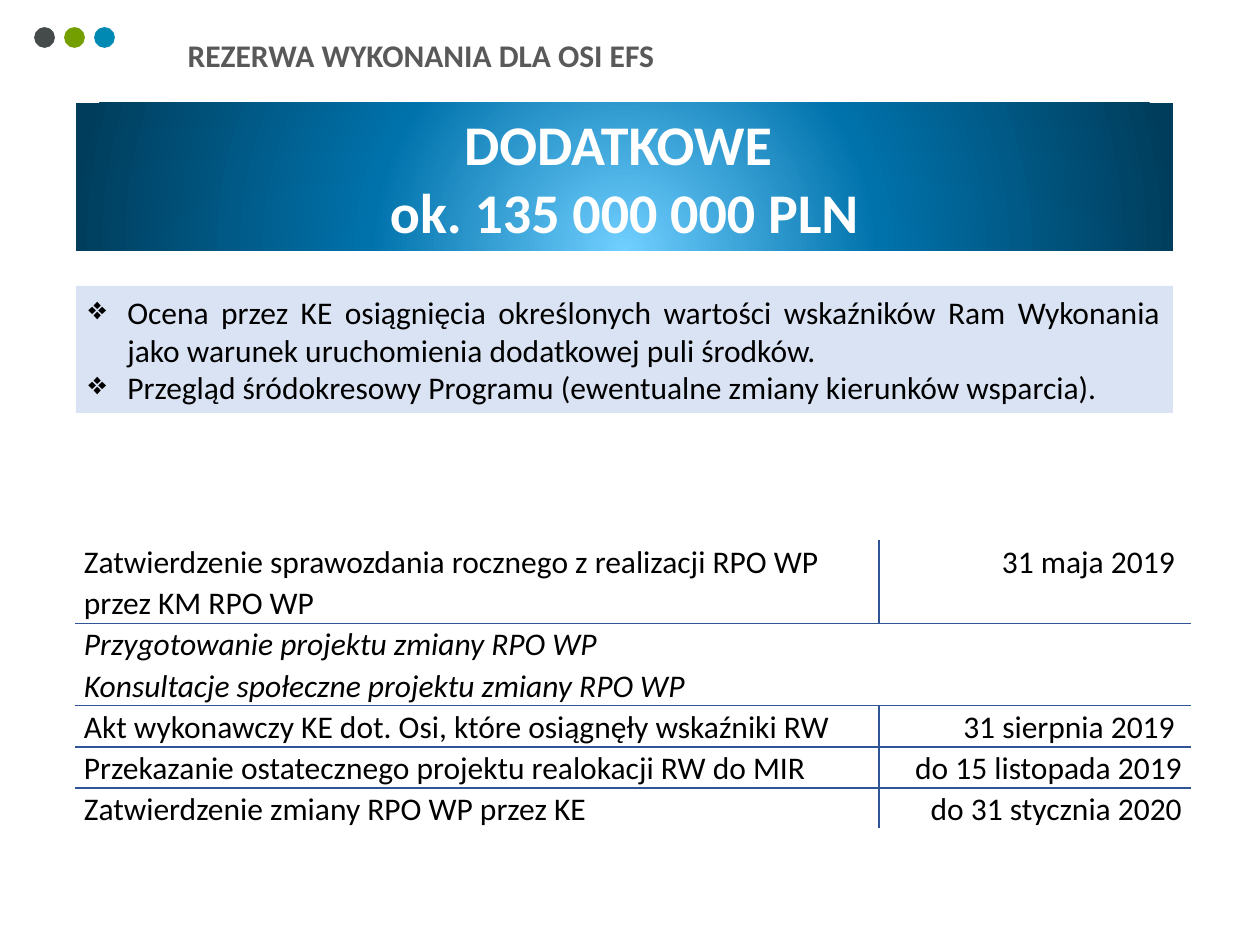
from lxml import etree
from pptx import Presentation
from pptx.dml.color import RGBColor
from pptx.enum.shapes import MSO_SHAPE
from pptx.enum.text import MSO_ANCHOR, MSO_AUTO_SIZE, PP_ALIGN
from pptx.oxml.ns import qn
from pptx.util import Emu, Pt

LEFT, CENTER, RIGHT, JUSTIFY = PP_ALIGN.LEFT, PP_ALIGN.CENTER, PP_ALIGN.RIGHT, PP_ALIGN.JUSTIFY
TOP, MIDDLE = MSO_ANCHOR.TOP, MSO_ANCHOR.MIDDLE
RECTANGLE, OVAL = MSO_SHAPE.RECTANGLE, MSO_SHAPE.OVAL
NO_AUTOFIT = MSO_AUTO_SIZE.NONE

# Content
TITLE = "REZERWA WYKONANIA DLA OSI EFS"
BANNER = ["DODATKOWE ", "ok. 135 000 000 PLN"]
CONDITIONS = [
    "Ocena przez KE osiągnięcia określonych wartości wskaźników Ram Wykonania "
    "jako warunek uruchomienia dodatkowej puli środków.",
    "Przegląd śródokresowy Programu (ewentualne zmiany kierunków wsparcia).",
]
# Stage, date (None: the stage spans both columns), row height
SCHEDULE = [
    ("Zatwierdzenie sprawozdania rocznego z realizacji RPO WP przez KM RPO WP",
     "31 maja 2019 ", 81),
    ("Przygotowanie projektu zmiany RPO WP\nKonsultacje społeczne projektu zmiany RPO WP\u00a0",
     None, 81),
    ("Akt wykonawczy KE dot. Osi, które osiągnęły wskaźniki RW", "31 sierpnia 2019 ", 40),
    ("Przekazanie ostatecznego projektu realokacji RW do MIR", "do 15 listopada 2019", 41),
    ("Zatwierdzenie zmiany RPO WP przez KE", "do 31 stycznia 2020", 40),
]
COLUMNS = [803, 311]

COLORS = {"title": "595959", "white": "FFFFFF", "text": "000000",
          "panel": "DAE3F3", "rule": "2F5597"}
DOTS = ["454B4B", "73A000", "0089B3"]
BANNER_STOPS = [(0, "70CFFF"), (46, "0072AB"), (100, "003D5C")]
FONT = "Calibri"
MARGIN, BAND_WIDTH = 76, 1097


def px(value):
    return Emu(round(value * 914400 / 126))


def rgb(color):
    return RGBColor.from_string(color)


def add_child(parent, tag, **attributes):
    child = etree.SubElement(parent, qn(tag))
    for name, value in attributes.items():
        child.set(name, str(value))
    return child


def write(frame, text, size, color, align, bold=False, italic=False, bullet=None):
    frame.text = text
    frame.word_wrap = True
    for paragraph in frame.paragraphs:
        paragraph.alignment = align
        if bullet:
            properties = paragraph._p.get_or_add_pPr()
            properties.set("marL", str(px(39)))
            properties.set("indent", str(px(-39)))
            add_child(properties, "a:buChar", char=bullet)
        for span in paragraph.runs:
            font = span.font
            font.name, font.size = FONT, Pt(size)
            font.bold, font.italic = bold, italic
            font.color.rgb = rgb(color)


def add_block(page, kind, left, top, width, height, color):
    block = page.shapes.add_shape(kind, px(left), px(top), px(width), px(height))
    block.shadow.inherit = False
    block.fill.solid()
    block.fill.fore_color.rgb = rgb(color)
    block.line.fill.background()
    block.text_frame.vertical_anchor = MIDDLE
    return block


def set_radial_fill(shape, stops):
    shape.fill.gradient()
    gradient = shape._element.spPr.find(qn("a:gradFill"))
    for child in list(gradient):
        gradient.remove(child)
    stop_list = add_child(gradient, "a:gsLst")
    for position, color in stops:
        stop = add_child(stop_list, "a:gs", pos=position * 1000)
        add_child(stop, "a:srgbClr", val=color)
    circle = add_child(gradient, "a:path", path="circle")
    add_child(circle, "a:fillToRect", l=50000, t=130000, r=50000, b=-30000)


def set_borders(cell, inner_sides):
    properties = cell._tc.get_or_add_tcPr()
    for side in "LRTB":
        line = add_child(properties, "a:ln" + side, w=Pt(1))
        fill = add_child(line, "a:solidFill")
        add_child(fill, "a:srgbClr", val=COLORS["rule" if side in inner_sides else "white"])


def add_schedule(page):
    heights = [height for _, _, height in SCHEDULE]
    table = page.shapes.add_table(len(SCHEDULE), len(COLUMNS), px(MARGIN), px(541),
                                  px(sum(COLUMNS)), px(sum(heights))).table
    table.first_row = table.horz_banding = False
    for column, width in zip(table.columns, COLUMNS):
        column.width = px(width)
    for index, (stage, date, height) in enumerate(SCHEDULE):
        table.rows[index].height = px(height)
        spanning = date is None
        if spanning:
            table.cell(index, 0).merge(table.cell(index, 1))
        # Rules run only between cells; the outer edges are white
        inner = ("T" if index else "") + ("B" if index < len(SCHEDULE) - 1 else "")
        sides = [inner + ("" if spanning else side) for side in "RL"]
        for position, (text, align) in enumerate([(stage, LEFT), (date, RIGHT)]):
            cell = table.cell(index, position)
            set_borders(cell, sides[position])
            cell.fill.background()
            cell.margin_left = cell.margin_right = px(8)
            cell.margin_top = cell.margin_bottom = 0
            if text:
                write(cell.text_frame, text, 18, COLORS["text"], align, italic=spanning)
                for paragraph in cell.text_frame.paragraphs:
                    paragraph.line_spacing = 1.07


def main():
    deck = Presentation()
    deck.slide_width, deck.slide_height = px(1260), px(945)
    page = deck.slides.add_slide(deck.slide_layouts[5])

    # Title
    title = page.shapes.title
    title.left, title.top, title.width, title.height = px(175), px(30), px(520), px(50)
    write(title.text_frame, TITLE, 18, COLORS["title"], LEFT, bold=True)
    title.text_frame.auto_size = NO_AUTOFIT
    title.text_frame.vertical_anchor = TOP

    # Corner dots
    for index, color in enumerate(DOTS):
        dot = add_block(page, OVAL, 35 + 30 * index, 28, 19, 19, color)
        dot.line.color.rgb = rgb(color)
        dot.line.width = Pt(1)

    # Amount banner
    banner = add_block(page, RECTANGLE, MARGIN, 103, BAND_WIDTH, 148, COLORS["panel"])
    set_radial_fill(banner, BANNER_STOPS)
    write(banner.text_frame, "\n".join(BANNER), 32, COLORS["white"], CENTER, bold=True)

    # Conditions
    panel = add_block(page, RECTANGLE, MARGIN, 286, BAND_WIDTH, 127, COLORS["panel"])
    write(panel.text_frame, "\n".join(CONDITIONS), 18, COLORS["text"], JUSTIFY, bullet="❖")

    # Schedule
    add_schedule(page)
    deck.save("out.pptx")


if __name__ == "__main__":
    main()
